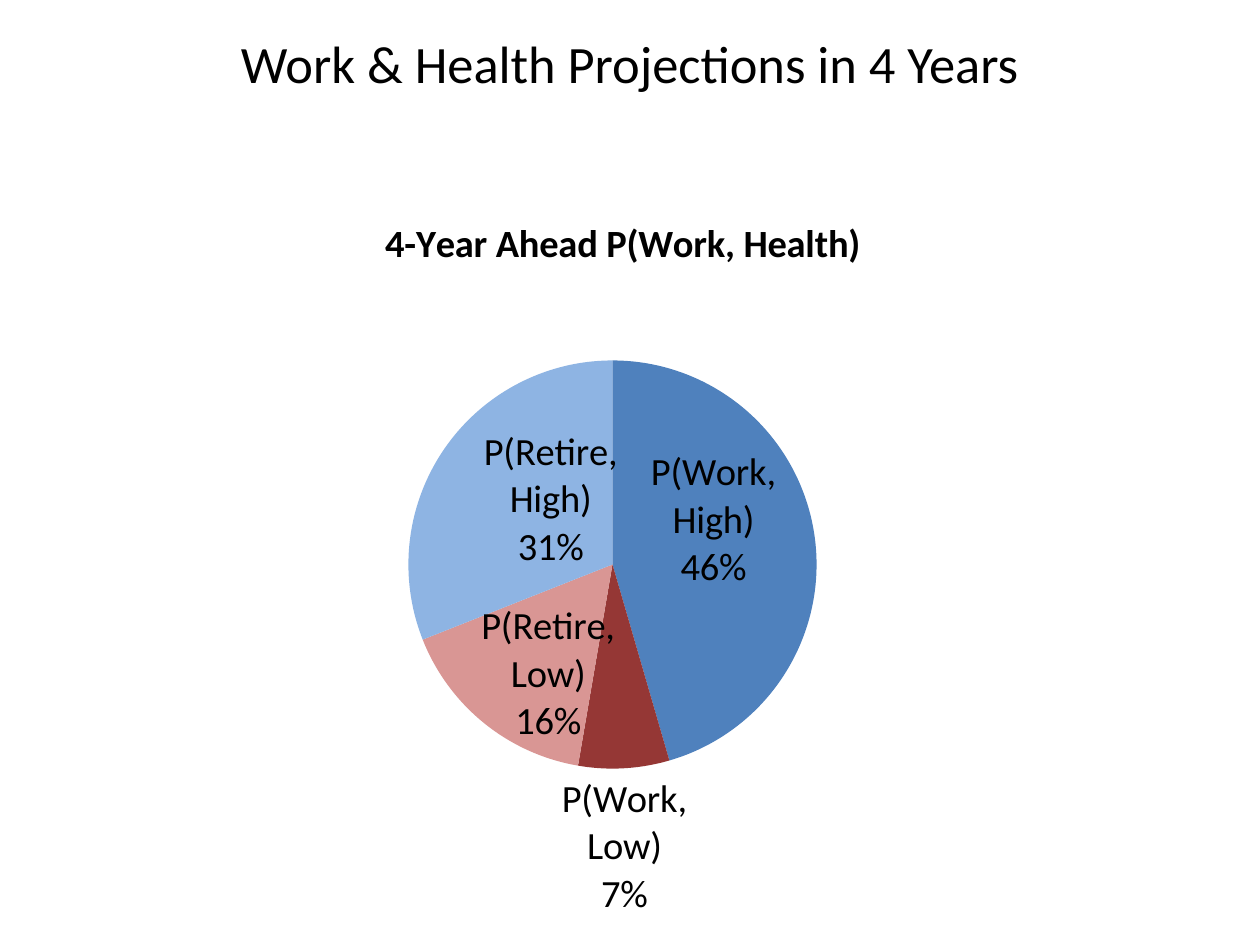
"""Build a slide with a pie chart of four-year work and health projections."""
import lxml.etree
import pptx
import pptx.chart.data
import pptx.dml.color
import pptx.enum.chart
import pptx.enum.text
import pptx.oxml.ns
import pptx.util

Cm = pptx.util.Cm
Pt = pptx.util.Pt
qn = pptx.oxml.ns.qn
spot = pptx.enum.chart.XL_LABEL_POSITION
ink = {"text": "000000", "work high": "4F81BD", "work low": "953735",
       "retire low": "D99694", "retire high": "8EB4E3"}


def style(font, size, bold=False):
    font.name = "Calibri"
    font.size = Pt(size)
    font.bold = bold
    font.color.rgb = pptx.dml.color.RGBColor.from_string(ink["text"])


def place(node, index, **marks):
    for old in node.findall(qn("c:layout")):
        node.remove(old)
    frame = lxml.etree.Element(qn("c:layout"))
    manual = lxml.etree.SubElement(frame, qn("c:manualLayout"))
    for key, val in marks.items():
        lxml.etree.SubElement(manual, qn("c:" + key)).set("val", str(val))
    node.insert(index, frame)


deck = pptx.Presentation()
deck.slide_width = Cm(25.4)
deck.slide_height = Cm(19.05)
slide = deck.slides.add_slide(deck.slide_layouts[5])

title = slide.shapes.title
title.left, title.top, title.width, title.height = Cm(0), Cm(0), Cm(25.4), Cm(2.54)
title.text_frame.vertical_anchor = pptx.enum.text.MSO_ANCHOR.MIDDLE
line = title.text_frame.paragraphs[0]
line.alignment = pptx.enum.text.PP_ALIGN.CENTER
run = line.add_run()
run.text = "Work & Health Projections in 4 Years"
style(run.font, 30)

data = pptx.chart.data.CategoryChartData()
data.categories = ["P(W, H)", "P(W, h)", "P(R, h)", "P(R, H)"]
data.add_series("Series 1", [45.5, 7.2, 16.3, 31])
chart = slide.shapes.add_chart(
    pptx.enum.chart.XL_CHART_TYPE.PIE, Cm(4.88), Cm(3.61), Cm(15.24), Cm(15.24), data).chart
style(chart.font, 10)
chart.has_legend = False
chart.has_title = True
run = chart.chart_title.text_frame.paragraphs[0].add_run()
run.text = "4-Year Ahead P(Work, Health)"
style(run.font, 22, True)
place(chart.chart_title._element, 1, xMode="edge", yMode="edge", x=0.18, y=0.04)
area = chart._chartSpace.find(".//" + qn("c:plotArea"))
place(area, 0, layoutTarget="inner", xMode="edge", yMode="edge", x=0.22, y=0.24, w=0.54, h=0.54)

plot = chart.plots[0]
plot.vary_by_categories = True
plot.has_data_labels = True
pie = plot.series[0]
tags = pie.data_labels
tags.show_percentage = True
tags.show_category_name = True
tags.show_value = False
tags.number_format = "0.0%"
tags.number_format_is_linked = False
style(tags.font, 22)

parts = [
    ("work high", "P(Work, High)", "46%", spot.CENTER, (0, -0.04)),
    ("work low", "P(Work, Low)", "7%", spot.OUTSIDE_END, None),
    ("retire low", "P(Retire, Low)", "16%", spot.CENTER, (0, 0.04)),
    ("retire high", "P(Retire, High)", "31%", spot.CENTER, (0.03, -0.01)),
]
for index, (hue, name, share, side, shift) in enumerate(parts):
    point = pie.points[index]
    point.format.fill.solid()
    point.format.fill.fore_color.rgb = pptx.dml.color.RGBColor.from_string(ink[hue])
    point.format.line.fill.background()
    label = point.data_label
    frame = label.text_frame
    for line, words in ((frame.paragraphs[0], name), (frame.add_paragraph(), share)):
        run = line.add_run()
        run.text = words
        style(run.font, 22)
    label.position = side
    if shift:
        node = frame._txBody.getparent().getparent()
        place(node, 1, x=shift[0], y=shift[1])

deck.save("out.pptx")
